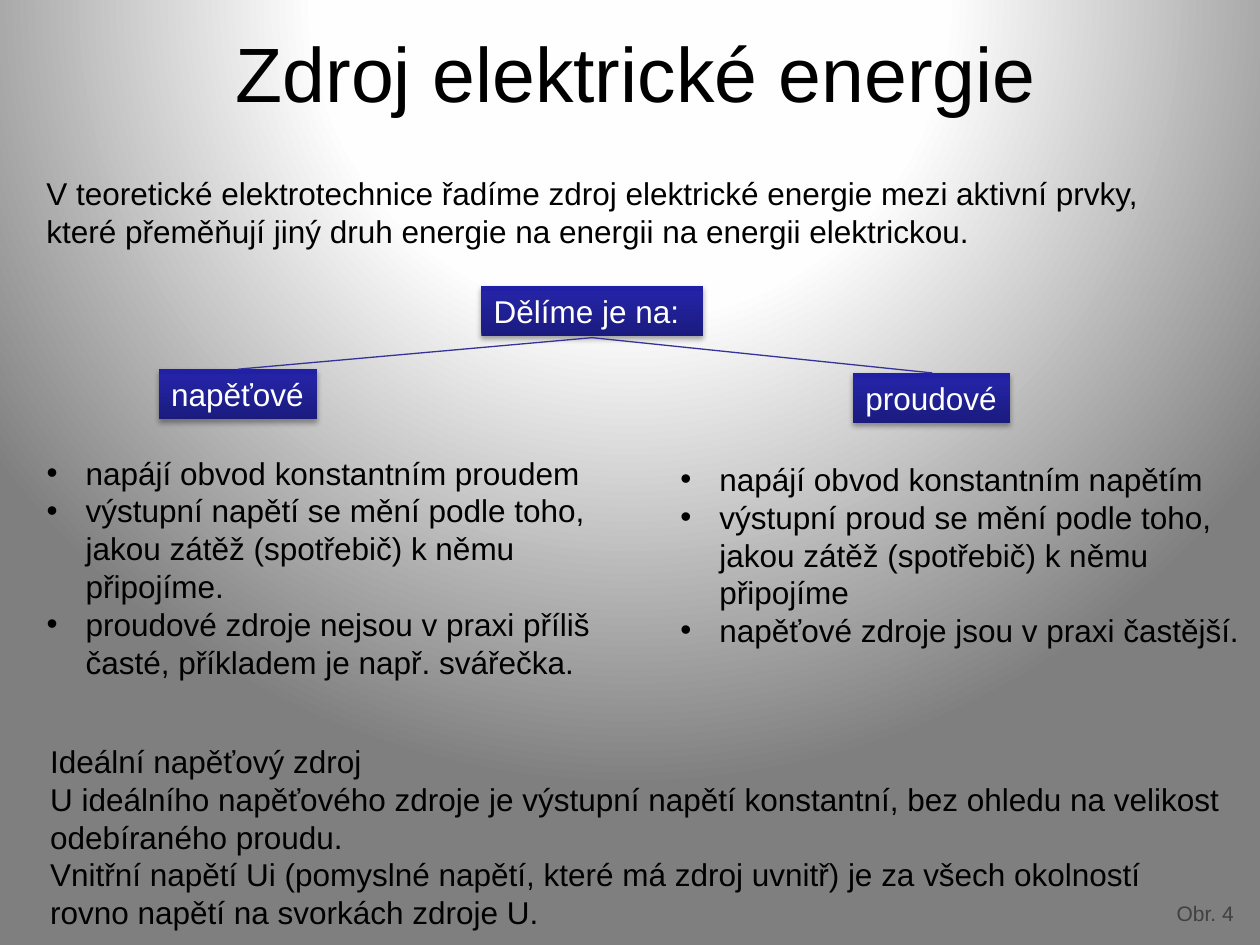
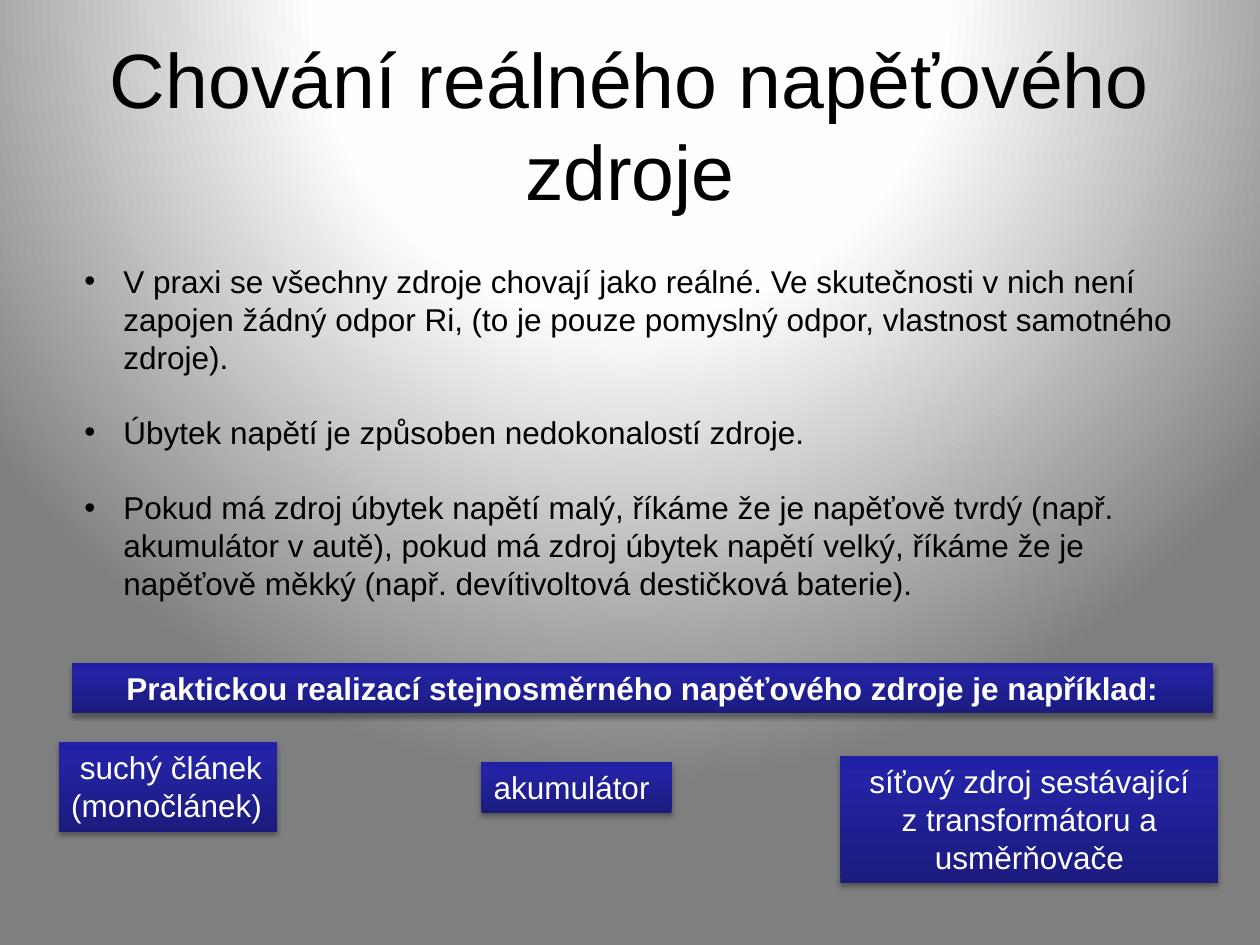
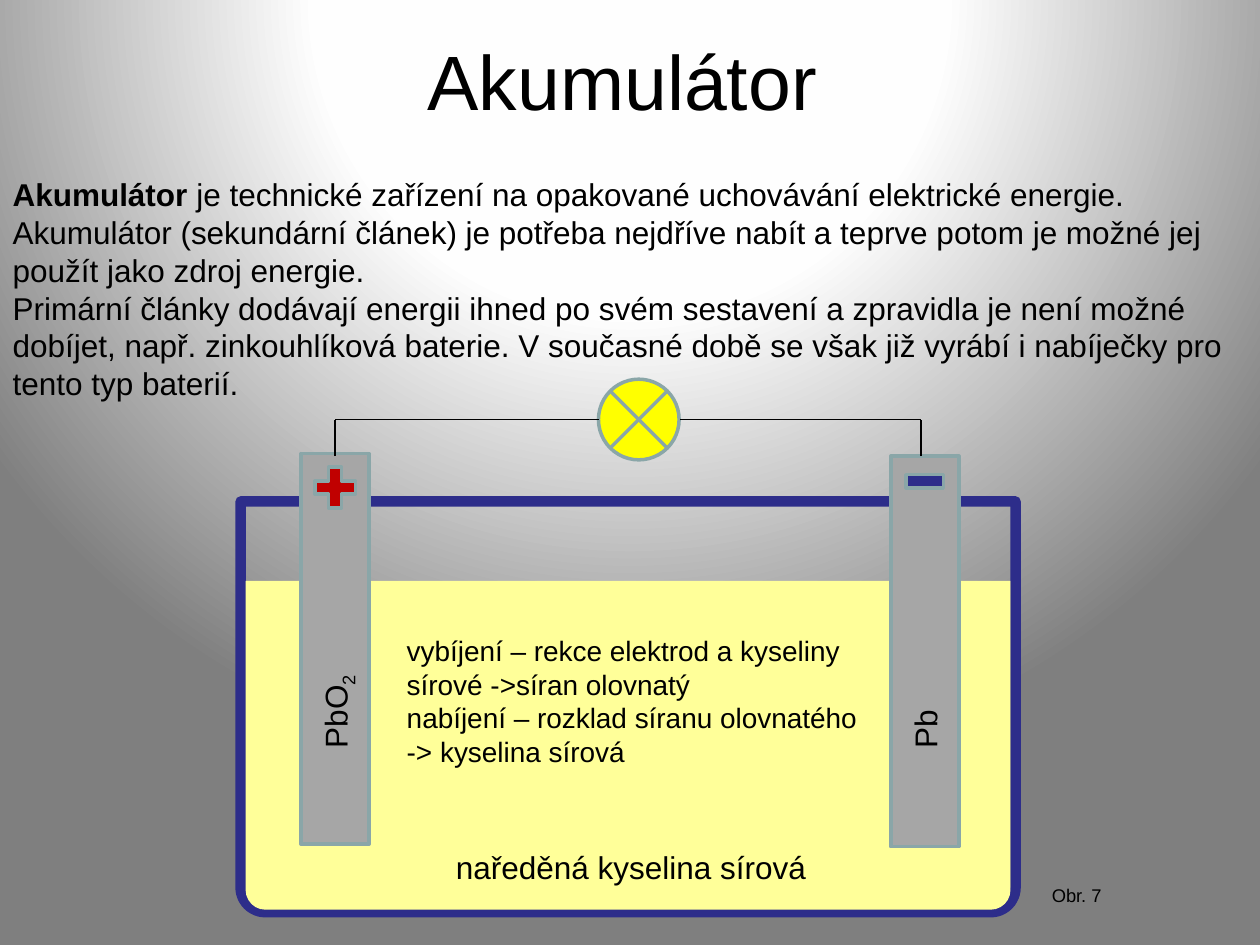
from dataclasses import dataclass

from lxml.etree import SubElement
from pptx import Presentation
from pptx.dml.color import RGBColor
from pptx.enum.shapes import MSO_CONNECTOR, MSO_SHAPE
from pptx.enum.text import MSO_ANCHOR, MSO_AUTO_SIZE, PP_ALIGN
from pptx.oxml import parse_xml
from pptx.oxml.ns import nsdecls, qn
from pptx.util import Inches, Pt


@dataclass(frozen=True)
class Theme:
    """Colours, type sizes and gradients shared by all slides."""

    font: str = "Arial"
    title_size: float = 44
    text_size: float = 18
    note_size: float = 16
    caption_size: float = 12
    small_caption_size: float = 10.5
    black: str = "000000"
    white: str = "FFFFFF"
    caption: str = "404040"
    branch: str = "333399"
    navy: str = "2D2D8A"
    acid: str = "FFFF99"
    electrode: str = "A6A6A6"
    outline: str = "8AA6A8"
    lamp: str = "FFFF00"
    plus: str = "C00000"
    background_stops: tuple = ((0, "FFFFFF"), (40, "FEFEFE"), (100, "7F7F7F"))
    label_stops: tuple = ((0, "1B1B7E"), (80, "2323A3"), (100, "2020A6"))
    background_direction: str = (
        '<a:path path="circle"><a:fillToRect l="50000" t="-80000" r="50000" b="180000"/></a:path>'
    )
    label_direction: str = '<a:lin ang="16200000" scaled="0"/>'
    label_shadow: str = (
        '<a:outerShdw {} blurRad="40000" dist="23000" dir="5400000" rotWithShape="0">'
        '<a:srgbClr val="000000"><a:alpha val="35000"/></a:srgbClr></a:outerShdw>'
    )


THEME = Theme()
SLIDE_WIDTH = Inches(10)
SLIDE_HEIGHT = Inches(7.5)
CELL = SLIDE_WIDTH / 100
TITLE_AND_CONTENT, TWO_CONTENT, TITLE_ONLY = 1, 3, 5


def cells(*counts):
    """Convert counts of grid cells, 100 across and 75 down, to lengths."""
    return [round(count * CELL) for count in counts]


def place(shape, area):
    """Move and size a shape on the grid."""
    shape.left, shape.top, shape.width, shape.height = cells(*area)


def apply_gradient(properties, stops, direction):
    """Replace the solid fill of a properties element by a gradient."""
    stop_list = "".join(
        f'<a:gs pos="{position * 1000}"><a:srgbClr val="{color}"/></a:gs>'
        for position, color in stops
    )
    gradient = parse_xml(
        f'<a:gradFill {nsdecls("a")} rotWithShape="1"><a:gsLst>{stop_list}</a:gsLst>'
        f"{direction}</a:gradFill>"
    )
    properties.replace(properties.find(qn("a:solidFill")), gradient)


def write_text(frame, paragraphs, size=THEME.text_size, color=THEME.black, bold=False,
               align=PP_ALIGN.LEFT, bullet=False, gap=0, line_spacing=1.0):
    """Fill a text frame; a paragraph is a string or a list of (text, run options)."""
    frame.word_wrap = True
    frame.auto_size = MSO_AUTO_SIZE.NONE
    for index, content in enumerate(paragraphs):
        paragraph = frame.paragraphs[0] if index == 0 else frame.add_paragraph()
        properties = paragraph._p.get_or_add_pPr()
        indent = Inches(0.31) if bullet else 0
        properties.set("marL", str(indent))
        properties.set("indent", str(-indent))
        if bullet:
            SubElement(properties, qn("a:buChar")).set("char", "•")
        else:
            SubElement(properties, qn("a:buNone"))
        paragraph.alignment = align
        paragraph.line_spacing = line_spacing
        paragraph.space_before = Pt(gap if index else 0)
        runs = [(content, {})] if isinstance(content, str) else content
        for text, options in runs:
            run = paragraph.add_run()
            run.text = text
            run.font.name = THEME.font
            run.font.size = Pt(size)
            run.font.bold = options.get("bold", bold)
            run.font.color.rgb = RGBColor.from_string(color)
            if "baseline" in options:
                run._r.get_or_add_rPr().set("baseline", str(options["baseline"] * 1000))


def add_titled_slide(presentation, layout, title, area, **text_format):
    """Add a slide and set its title."""
    slide = presentation.slides.add_slide(presentation.slide_layouts[layout])
    place(slide.shapes.title, area)
    write_text(slide.shapes.title.text_frame, [title], size=THEME.title_size,
               align=PP_ALIGN.CENTER, **text_format)
    return slide


def fill_body(slide, index, area, paragraphs, **text_format):
    """Place and fill a body placeholder."""
    body = slide.placeholders[index]
    place(body, area)
    write_text(body.text_frame, paragraphs, **text_format)


def add_text(slide, area, paragraphs, rotation=0, **text_format):
    """Add a text box."""
    box = slide.shapes.add_textbox(*cells(*area))
    box.rotation = rotation
    write_text(box.text_frame, paragraphs, **text_format)


def add_figure(slide, kind, area, fill=None, line=None, line_width=2):
    """Add a preset shape with an optional fill and outline."""
    shape = slide.shapes.add_shape(kind, *cells(*area))
    shape.shadow.inherit = False
    if fill:
        shape.fill.solid()
        shape.fill.fore_color.rgb = RGBColor.from_string(fill)
    else:
        shape.fill.background()
    if line:
        shape.line.color.rgb = RGBColor.from_string(line)
        shape.line.width = Pt(line_width)
    else:
        shape.line.fill.background()
    return shape


def add_label(slide, area, paragraphs, align=PP_ALIGN.LEFT, **text_format):
    """Add a shaded blue label with white text."""
    label = add_figure(slide, MSO_SHAPE.RECTANGLE, area, fill=THEME.navy)
    properties = label._element.spPr
    apply_gradient(properties, THEME.label_stops, THEME.label_direction)
    effects = properties.find(qn("a:effectLst"))
    effects.append(parse_xml(THEME.label_shadow.format(nsdecls("a"))))
    frame = label.text_frame
    frame.vertical_anchor = MSO_ANCHOR.TOP
    if align == PP_ALIGN.LEFT:
        frame.margin_right = 0
    elif align == PP_ALIGN.RIGHT:
        frame.margin_left = 0
        frame.margin_right = Inches(0.12)
    write_text(frame, paragraphs, color=THEME.white, align=align, **text_format)


def add_line(slide, start, end, color):
    """Add a thin straight line between two grid points."""
    line = slide.shapes.add_connector(MSO_CONNECTOR.STRAIGHT, *cells(*start, *end))
    line.line.color.rgb = RGBColor.from_string(color)
    line.line.width = Pt(0.75)
    SubElement(line._element.spPr, qn("a:effectLst"))


def add_vessel(slide, area, radius, **style):
    """Add a vessel outline with rounded bottom corners."""
    vessel = add_figure(slide, MSO_SHAPE.ROUND_2_SAME_RECTANGLE, area, **style)
    vessel.adjustments[0] = 0
    vessel.adjustments[1] = radius


def build_sources(presentation):
    """Build the slide that divides sources into two kinds."""
    slide = add_titled_slide(presentation, TWO_CONTENT, "Zdroj elektrické energie",
                             (5.5, 0, 90, 11.4))
    add_text(slide, (92.4, 71, 7.1, 3), ["Obr. 4"],
             size=THEME.caption_size, color=THEME.caption)
    add_text(slide, (2.7, 13.3, 93.7, 7.1), [
        "V teoretické elektrotechnice řadíme zdroj elektrické energie mezi aktivní prvky, "
        "které přeměňují jiný druh energie na energii na energii elektrickou.",
    ])
    add_label(slide, (38.2, 22.7, 17.6, 4), ["Dělíme je na:"])
    add_label(slide, (12.6, 29.3, 12.6, 4), ["napěťové"])
    add_label(slide, (67.7, 29.6, 12.5, 4), ["proudové"])
    for end in ((18.9, 29.3), (74, 29.6)):
        add_line(slide, (47, 26.8), end, THEME.branch)
    fill_body(slide, 1, (2.7, 35.5, 47.6, 19.2), [
        "napájí obvod konstantním proudem",
        "výstupní napětí se mění podle toho, jakou zátěž (spotřebič) k němu připojíme.",
        "proudové zdroje nejsou v praxi příliš časté, příkladem je např. svářečka.",
    ], bullet=True)
    fill_body(slide, 2, (53, 36, 46.5, 16.2), [
        "napájí obvod konstantním napětím",
        "výstupní proud se mění podle toho, jakou zátěž (spotřebič) k němu připojíme",
        "napěťové zdroje jsou v praxi častější.",
    ], bullet=True)
    add_text(slide, (3, 58.4, 94.8, 16.1), [
        "Ideální napěťový zdroj",
        "U ideálního napěťového zdroje je výstupní napětí konstantní, bez ohledu na "
        "velikost odebíraného proudu.",
        "Vnitřní napětí Ui (pomyslné napětí, které má zdroj uvnitř) je za všech okolností "
        "rovno napětí na svorkách zdroje U.",
    ])


def build_real_source(presentation):
    """Build the slide on real voltage sources."""
    slide = add_titled_slide(presentation, TITLE_AND_CONTENT,
                             "Chování reálného napěťového zdroje", (0, 2.8, 100, 14))
    fill_body(slide, 1, (5.7, 20.3, 89.6, 28.3), [
        "V praxi se všechny zdroje chovají jako reálné. Ve skutečnosti v nich není zapojen "
        "žádný odpor Ri, (to je pouze pomyslný odpor, vlastnost samotného zdroje).",
        "Úbytek napětí je způsoben nedokonalostí zdroje.",
        "Pokud má zdroj úbytek napětí malý, říkáme že je napěťově tvrdý (např. akumulátor "
        "v autě), pokud má zdroj úbytek napětí velký, říkáme že je napěťově měkký "
        "(např. devítivoltová destičková baterie).",
    ], bullet=True, gap=21.5)
    add_label(slide, (5.7, 52.6, 90.6, 4),
              ["Praktickou realizací stejnosměrného napěťového zdroje je například:"],
              align=PP_ALIGN.CENTER, bold=True)
    add_label(slide, (4.7, 58.9, 17.3, 7.1), ["suchý článek", "(monočlánek)"],
              align=PP_ALIGN.RIGHT)
    add_label(slide, (38.2, 60.5, 15.1, 4), ["akumulátor"])
    add_label(slide, (66.7, 60, 30, 10.1),
              ["síťový zdroj sestávající", "z transformátoru a usměrňovače"],
              align=PP_ALIGN.CENTER)


def add_electrode(slide, left, top, formula):
    """Add an electrode with its chemical formula."""
    add_figure(slide, MSO_SHAPE.RECTANGLE, (left, top, 5.4, 31),
               fill=THEME.electrode, line=THEME.outline)
    add_text(slide, (left - 1.65, 54, 8.7, 4), [formula], rotation=270)


def build_accumulator(presentation):
    """Build the slide with the accumulator diagram."""
    slide = add_titled_slide(presentation, TITLE_AND_CONTENT, "Akumulátor",
                             (-1.2, 0.6, 101.2, 7.8), line_spacing=1.5)
    fill_body(slide, 1, (0, 13.4, 100, 19.2), [
        [("Akumulátor", {"bold": True}),
         (" je technické zařízení na opakované uchovávání elektrické energie.", {})],
        "Akumulátor (sekundární článek) je potřeba nejdříve nabít a teprve potom je možné "
        "jej použít jako zdroj energie.",
        "Primární články dodávají energii ihned po svém sestavení a zpravidla je není možné "
        "dobíjet, např. zinkouhlíková baterie. V současné době se však již vyrábí i "
        "nabíječky pro tento typ baterií.",
    ])
    add_vessel(slide, (19.1, 39.8, 61.5, 32.6), 0.06, line=THEME.navy, line_width=6)
    add_vessel(slide, (19.5, 46.1, 60.7, 26.1), 0.06, fill=THEME.acid)
    add_electrode(slide, 23.9, 36, [("PbO", {}), ("2", {"baseline": -25})])
    add_electrode(slide, 70.7, 36.2, "Pb")
    add_text(slide, (35.2, 66.8, 31, 4), ["naředěná kyselina sírová"])
    add_text(slide, (31.3, 49.8, 38.4, 11.8), [
        "vybíjení – rekce elektrod a kyseliny sírové ->síran olovnatý",
        "nabíjení – rozklad síranu olovnatého -> kyselina sírová",
    ], size=THEME.note_size)
    add_figure(slide, MSO_SHAPE.FLOWCHART_SUMMING_JUNCTION, (47.5, 30.1, 6.4, 6.4),
               fill=THEME.lamp, line=THEME.outline)
    wire_height = 33.3
    for terminal, lamp_side in ((26.6, 47.5), (73.1, 54)):
        add_line(slide, (terminal, 36.2), (terminal, wire_height), THEME.black)
        add_line(slide, (lamp_side, wire_height), (terminal, wire_height), THEME.black)
    add_figure(slide, MSO_SHAPE.MATH_PLUS, (24.4, 36.5, 4.4, 4.4),
               fill=THEME.plus, line=THEME.outline)
    add_figure(slide, MSO_SHAPE.MATH_MINUS, (71.4, 36, 4, 4.4),
               fill=THEME.navy, line=THEME.outline)
    add_text(slide, (82.5, 69.7, 7, 2.8), ["Obr. 7"], size=THEME.small_caption_size)


def main():
    """Build and save the presentation."""
    presentation = Presentation()
    presentation.slide_width = SLIDE_WIDTH
    presentation.slide_height = SLIDE_HEIGHT
    master = presentation.slide_master
    master.background.fill.solid()
    background = master.element.find(".//" + qn("p:bgPr"))
    apply_gradient(background, THEME.background_stops, THEME.background_direction)
    build_sources(presentation)
    build_real_source(presentation)
    build_accumulator(presentation)
    presentation.save("out.pptx")


if __name__ == "__main__":
    main()
